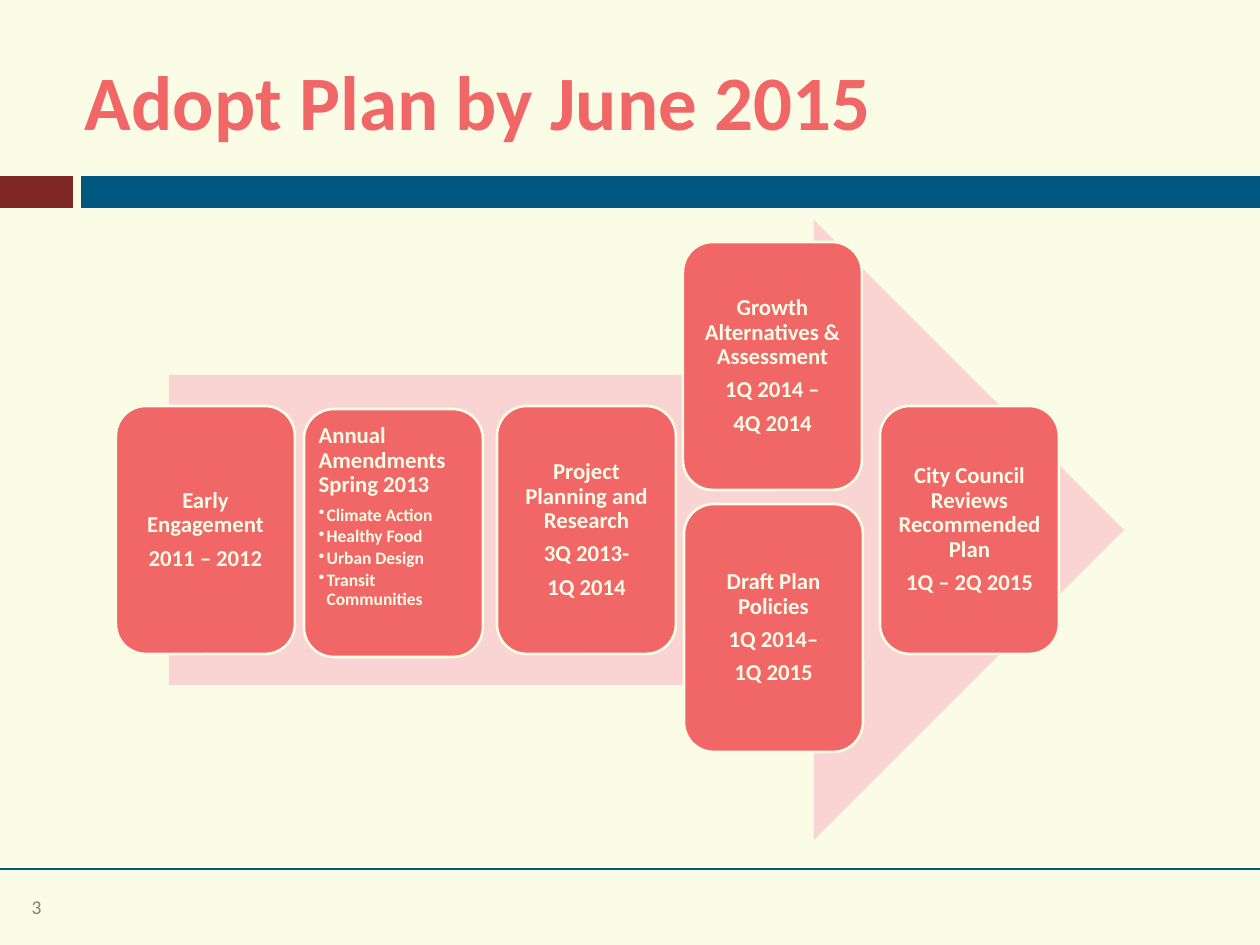
from lxml.etree import SubElement
from pptx import Presentation
from pptx.dml.color import RGBColor
from pptx.enum.shapes import MSO_CONNECTOR, MSO_SHAPE
from pptx.enum.text import MSO_ANCHOR, PP_ALIGN
from pptx.oxml.ns import qn
from pptx.util import Emu, Pt

CREAM = RGBColor(0xFB, 0xFC, 0xE6)
CORAL = RGBColor(0xF1, 0x66, 0x67)
PINK = RGBColor(0xFA, 0xD3, 0xD3)
MAROON = RGBColor(0x80, 0x26, 0x25)
BLUE = RGBColor(0x00, 0x57, 0x7F)
OLIVE = RGBColor(0x7F, 0x84, 0x65)
SCALE = 914400 / 126


def px(*values):
    return [Emu(round(v * SCALE)) for v in values]


def write(tf, text, size=13, color=CREAM, bold=True, align=PP_ALIGN.CENTER,
          anchor=MSO_ANCHOR.MIDDLE, inset=6, spacing=None, after=0, bullet=False):
    tf.word_wrap = True
    tf.vertical_anchor = anchor
    tf.margin_left = tf.margin_right = tf.margin_top = tf.margin_bottom = px(inset)[0]
    for line in text.split("\n"):
        p = tf.paragraphs[0] if not tf.text else tf.add_paragraph()
        p.alignment = align
        p.line_spacing = spacing
        p.space_after = Pt(after)
        if bullet:
            pPr = p._p.get_or_add_pPr()
            pPr.set("marL", str(px(8)[0]))
            pPr.set("indent", str(px(-8)[0]))
            SubElement(pPr, qn("a:buChar"), char="•")
        r = p.add_run()
        r.text = line
        r.font.name = "Calibri"
        r.font.size = Pt(size)
        r.font.bold = bold
        r.font.color.rgb = color


prs = Presentation()
prs.slide_width, prs.slide_height = px(1260, 945)
s = prs.slides.add_slide(prs.slide_layouts[6])
s.background.fill.solid()
s.background.fill.fore_color.rgb = CREAM

for kind, box, color in [
    (MSO_SHAPE.RECTANGLE, (0, 176, 73, 32), MAROON),
    (MSO_SHAPE.RECTANGLE, (81, 176, 1179, 32), BLUE),
    (MSO_SHAPE.RIGHT_ARROW, (169, 220, 955, 620), PINK),
]:
    sp = s.shapes.add_shape(kind, *px(*box))
    sp.shadow.inherit = False
    sp.fill.solid()
    sp.fill.fore_color.rgb = color
    sp.line.fill.background()

rule = s.shapes.add_connector(MSO_CONNECTOR.STRAIGHT, *px(0, 869, 1260, 869))
rule.line.color.rgb = BLUE
rule.line.width = Pt(1.5)
SubElement(rule._element.spPr, qn("a:effectLst"))

title = s.shapes.add_textbox(*px(73, 32, 1134, 136))
write(title.text_frame, "Adopt Plan by June 2015", size=44, color=CORAL,
      align=PP_ALIGN.LEFT, inset=12)
number = s.shapes.add_textbox(*px(0, 890, 73, 34))
write(number.text_frame, "3", size=11.1, color=OLIVE, bold=False, inset=0)

CARDS = [
    (116, 406, "Early Engagement\n2011 – 2012", ""),
    (304, 409, "Annual Amendments Spring 2013",
     "Climate Action\nHealthy Food\nUrban Design\nTransit Communities"),
    (497, 406, "Project Planning and Research\n3Q 2013-\n1Q 2014", ""),
    (683, 242, "Growth Alternatives & Assessment\n1Q 2014 –\n4Q 2014", ""),
    (684, 504, "Draft Plan Policies\n1Q 2014–\n1Q 2015", ""),
    (880, 406, "City Council Reviews Recommended Plan\n1Q – 2Q 2015", ""),
]
for x, y, text, topics in CARDS:
    sp = s.shapes.add_shape(MSO_SHAPE.ROUNDED_RECTANGLE, *px(x, y, 179, 248))
    sp.shadow.inherit = False
    sp.fill.solid()
    sp.fill.fore_color.rgb = CORAL
    sp.line.color.rgb = CREAM
    sp.line.width = Pt(1.5)
    layout = dict(spacing=0.9)
    if topics:
        layout.update(align=PP_ALIGN.LEFT, anchor=MSO_ANCHOR.TOP)
    write(sp.text_frame, text, after=5, **layout)
    if topics:
        write(sp.text_frame, topics, size=10, after=1.5, bullet=True, **layout)

prs.save("out.pptx")
